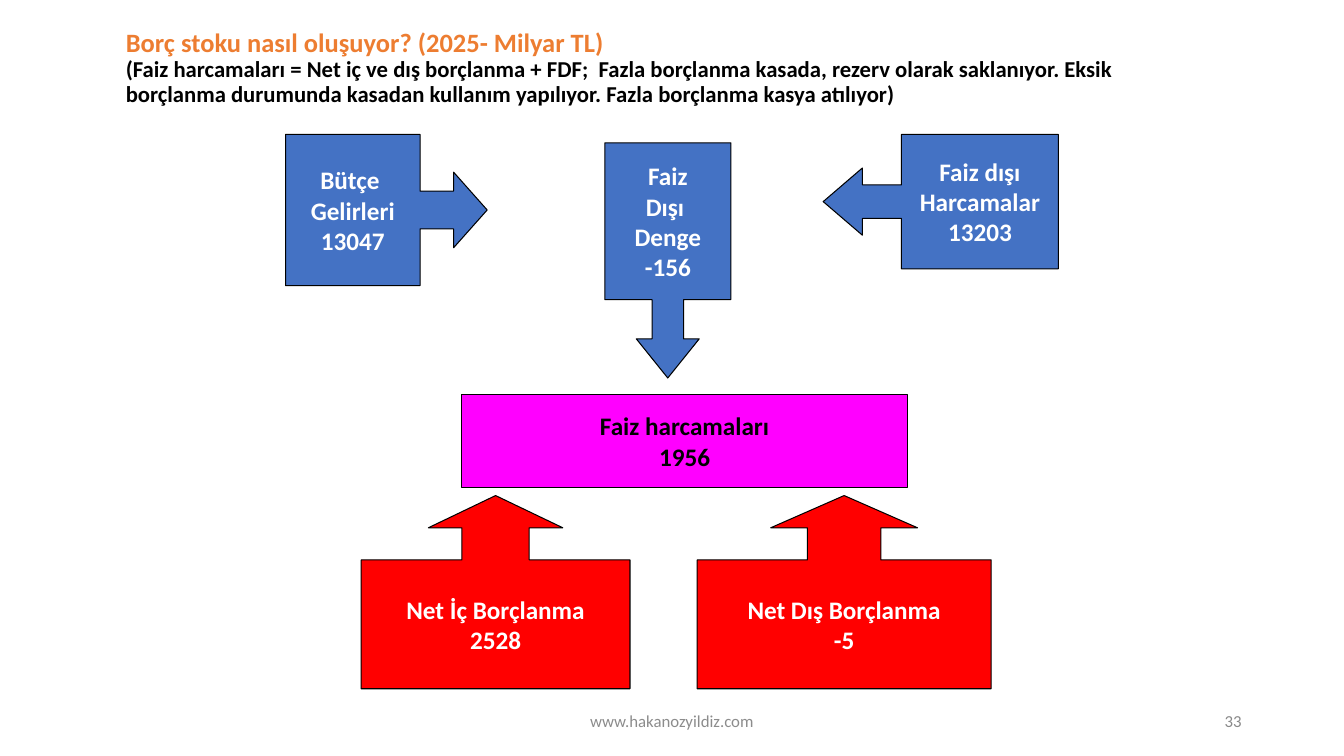
from pptx import Presentation
from pptx.dml.color import RGBColor
from pptx.enum import shapes, text
from pptx.util import Pt

KIND = shapes.MSO_SHAPE
ALIGN = text.PP_ALIGN
BLUE, RED, PINK = "4472C4", "FF0000", "FF00FF"
BLACK, WHITE, ORANGE, GREY = "000000", "FFFFFF", "ED7D31", "8C8C8C"


def color(code):
    return RGBColor.from_string(code)


def add_run(para, words, size, code, bold=True):
    run = para.add_run()
    run.text = words
    font = run.font
    font.name, font.size, font.bold = "Calibri", Pt(size), bold
    font.color.rgb = color(code)


def add_text(slide, box):
    """Add an empty, wrapping text box and return its frame."""
    frame = slide.shapes.add_textbox(*map(Pt, box)).text_frame
    frame.word_wrap = True
    frame.vertical_anchor = text.MSO_ANCHOR.MIDDLE
    return frame


def add_title(slide, box):
    para = add_text(slide, box).paragraphs[0]
    para.line_spacing = 0.9
    add_run(para, "Borç stoku nasıl oluşuyor? (2025- Milyar TL)", 18.9, ORANGE)
    para.add_line_break()
    add_run(para, "(Faiz harcamaları = Net iç ve dış borçlanma + FDF;  Fazla borçlanma "
            "kasada, rezerv olarak saklanıyor. Eksik borçlanma durumunda kasadan "
            "kullanım yapılıyor. Fazla borçlanma kasya atılıyor)", 16.2, BLACK)


def add_block(slide, box, kind, fill, lines, ink=WHITE, adjust=()):
    shape = slide.shapes.add_shape(kind, *map(Pt, box))
    shape.shadow.inherit = False
    for spot, value in enumerate(adjust):
        shape.adjustments[spot] = value
    shape.fill.solid()
    shape.fill.fore_color.rgb = color(fill)
    shape.line.color.rgb = color(BLACK)
    shape.line.width = Pt(0.75)
    frame = shape.text_frame
    frame.word_wrap = False
    frame.vertical_anchor = text.MSO_ANCHOR.MIDDLE
    for spot, line in enumerate(lines):
        para = frame.add_paragraph() if spot else frame.paragraphs[0]
        para.alignment = ALIGN.CENTER
        add_run(para, line, 18, ink)


def add_arrow(slide, box, kind, fill, lines, shaft, head):
    """Add an arrow callout whose text part takes two thirds of its length."""
    add_block(slide, box, kind, fill, lines, adjust=(shaft, shaft, head, 0.667))


def add_flow(slide, box):
    left, top, width, height = box
    add_arrow(slide, (left, top, 144, 108), KIND.RIGHT_ARROW_CALLOUT, BLUE,
              ["Bütçe ", "Gelirleri", "13047"], 0.25, 0.222)
    add_arrow(slide, (left + width - 168, top, 168, 96), KIND.LEFT_ARROW_CALLOUT, BLUE,
              ["Faiz dışı", "Harcamalar", "13203"], 0.25, 0.292)
    add_arrow(slide, (left + 228, top + 6, 90, 168), KIND.DOWN_ARROW_CALLOUT, BLUE,
              ["Faiz", "Dışı ", "Denge", "-156"], 0.25, 0.311)
    add_block(slide, (left + 126, top + 186, 318, 66), KIND.FLOWCHART_PROCESS, PINK,
              ["Faiz harcamaları", "1956"], BLACK)
    low = top + height - 138
    add_arrow(slide, (left + 54, low, 192, 138), KIND.UP_ARROW_CALLOUT, RED,
              ["Net İç Borçlanma", "2528"], 0.348, 0.167)
    add_arrow(slide, (left + 294, low, 210, 138), KIND.UP_ARROW_CALLOUT, RED,
              ["Net Dış Borçlanma", "-5"], 0.38, 0.167)


def add_footer(slide, box):
    left, top, width, height = box
    parts = [("www.hakanozyildiz.com", left, 324, ALIGN.CENTER, GREY),
             ("33", left + width - 216, 216, ALIGN.RIGHT, "898989")]
    for words, x, wide, align, code in parts:
        para = add_text(slide, (x, top, wide, height)).paragraphs[0]
        para.alignment = align
        add_run(para, words, 12, code, False)


def main():
    deck = Presentation()
    deck.slide_width, deck.slide_height = Pt(960), Pt(540)
    slide = deck.slides.add_slide(deck.slide_layouts[6])
    add_title(slide, (82.8, 20.2, 724.3, 57.6))
    add_flow(slide, (204, 96, 552, 396))
    add_footer(slide, (318, 500.5, 576, 28.75))
    deck.save("out.pptx")


if __name__ == "__main__":
    main()
